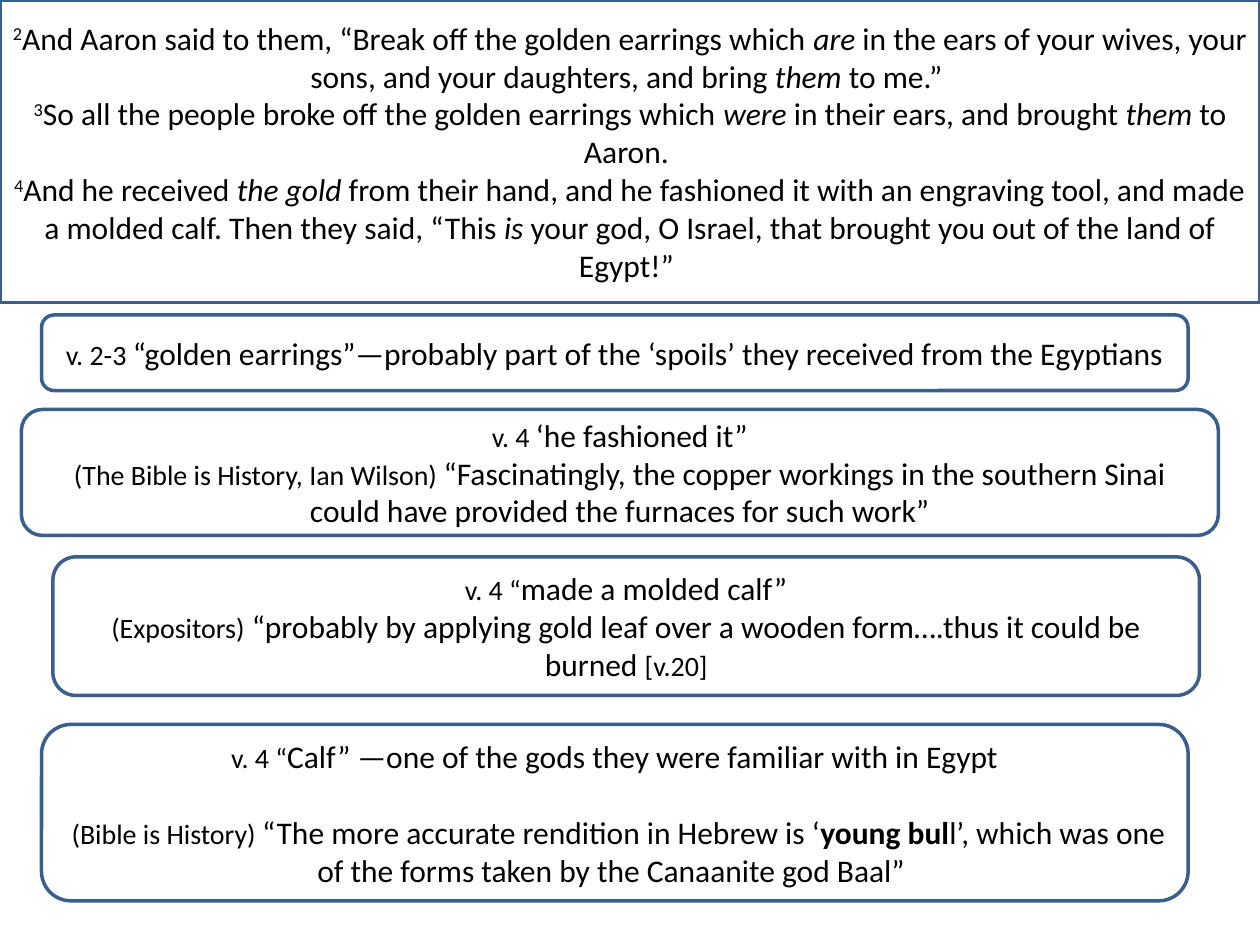
from pptx import Presentation
from pptx.dml.color import RGBColor
from pptx.enum.shapes import MSO_SHAPE
from pptx.enum.text import MSO_ANCHOR, PP_ALIGN
from pptx.util import Inches, Pt

RECTANGLE = MSO_SHAPE.RECTANGLE
ROUNDED = MSO_SHAPE.ROUNDED_RECTANGLE
MIDDLE = MSO_ANCHOR.MIDDLE
CENTER = PP_ALIGN.CENTER

WHITE = RGBColor(0xFF, 0xFF, 0xFF)
BLACK = RGBColor(0x00, 0x00, 0x00)
BORDER_BLUE = RGBColor(0x3A, 0x5F, 0x8C)

BODY = {"name": "Calibri", "size": Pt(18), "bold": False, "italic": False}
REFERENCE = {**BODY, "size": Pt(16)}
ITALIC = {**BODY, "italic": True}
BOLD = {**BODY, "bold": True}
SUPERSCRIPT = "30000"

VERSES = [
    ("2", [
        ("And Aaron said to them, “Break off the golden earrings which ", BODY),
        ("are", ITALIC),
        (" in the ears of your wives, your sons, and your daughters, and bring ", BODY),
        ("them", ITALIC),
        (" to me.” ", BODY),
    ]),
    ("3", [
        ("So all the people broke off the golden earrings which ", BODY),
        ("were", ITALIC),
        (" in their ears, and brought ", BODY),
        ("them", ITALIC),
        (" to Aaron. ", BODY),
    ]),
    ("4", [
        ("And he received ", BODY),
        ("the gold", ITALIC),
        (" from their hand, and he fashioned it with an engraving tool, "
         "and made a molded calf. Then they said, “This ", BODY),
        ("is", ITALIC),
        (" your god, O Israel, that brought you out of the land of Egypt!” ", BODY),
    ]),
]

NOTES = [
    ((0.33, 2.5, 9.1, 0.6), 0, [
        [("v. 2-3 ", REFERENCE),
         ("“golden earrings”—probably part of the ‘spoils’ they received "
          "from the Egyptians", BODY)],
    ]),
    ((0.17, 3.25, 9.5, 1), 0, [
        [("v. 4 ", REFERENCE), ("‘he fashioned it”", BODY)],
        [("(The Bible is History, Ian Wilson) ", REFERENCE),
         ("“Fascinatingly, the copper workings in the southern Sinai "
          "could have provided the furnaces for such work”", BODY)],
    ]),
    ((0.42, 4.42, 9.1, 1.1), 0, [
        [("v. 4 “", REFERENCE), ("made a molded calf”", BODY)],
        [("(Expositors)", REFERENCE),
         (" “probably by applying gold leaf over a wooden form….thus "
          "it could be burned ", BODY),
         ("[v.20]", REFERENCE)],
    ]),
    ((0.33, 5.75, 9.1, 1.4), 22, [
        [("v. 4 “", REFERENCE),
         ("Calf” —one of the gods they were familiar with in Egypt", BODY)],
        [(" ", BODY),
         ("(Bible is History) ", REFERENCE),
         ("“The more accurate rendition in Hebrew is ‘", BODY),
         ("young bul", BOLD),
         ("l’, which was one of the forms taken by the Canaanite god Baal” ", BODY)],
    ]),
]


def add_runs(paragraph, pieces):
    paragraph.alignment = CENTER
    for text, style in pieces:
        run = paragraph.add_run()
        run.text = text
        for attribute, value in style.items():
            setattr(run.font, attribute, value)
        run.font.color.rgb = BLACK


def add_panel(slide, outline, box):
    panel = slide.shapes.add_shape(outline, *map(Inches, box))
    panel.shadow.inherit = False
    panel.fill.solid()
    panel.fill.fore_color.rgb = WHITE
    panel.line.color.rgb = BORDER_BLUE
    panel.line.width = Pt(2)
    panel.text_frame.word_wrap = True
    panel.text_frame.vertical_anchor = MIDDLE
    return panel.text_frame


def add_scripture(slide, box, verses):
    passage = add_panel(slide, RECTANGLE, box).paragraphs[0]
    for index, (number, pieces) in enumerate(verses):
        if index:
            passage.add_line_break()
        add_runs(passage, [(number, BODY)])
        passage.runs[-1]._r.get_or_add_rPr().set("baseline", SUPERSCRIPT)
        add_runs(passage, pieces)


def add_note(slide, box, gap, lines):
    frame = add_panel(slide, ROUNDED, box)
    for index, pieces in enumerate(lines):
        paragraph = frame.add_paragraph() if index else frame.paragraphs[0]
        if index and gap:
            paragraph.space_before = Pt(gap)
        add_runs(paragraph, pieces)


def main():
    presentation = Presentation()
    presentation.slide_width = Inches(10)
    presentation.slide_height = Inches(7.5)
    slide = presentation.slides.add_slide(presentation.slide_layouts[6])
    add_scripture(slide, (0, 0, 10, 2.4), VERSES)
    for box, gap, lines in NOTES:
        add_note(slide, box, gap, lines)
    presentation.save("out.pptx")


if __name__ == "__main__":
    main()
